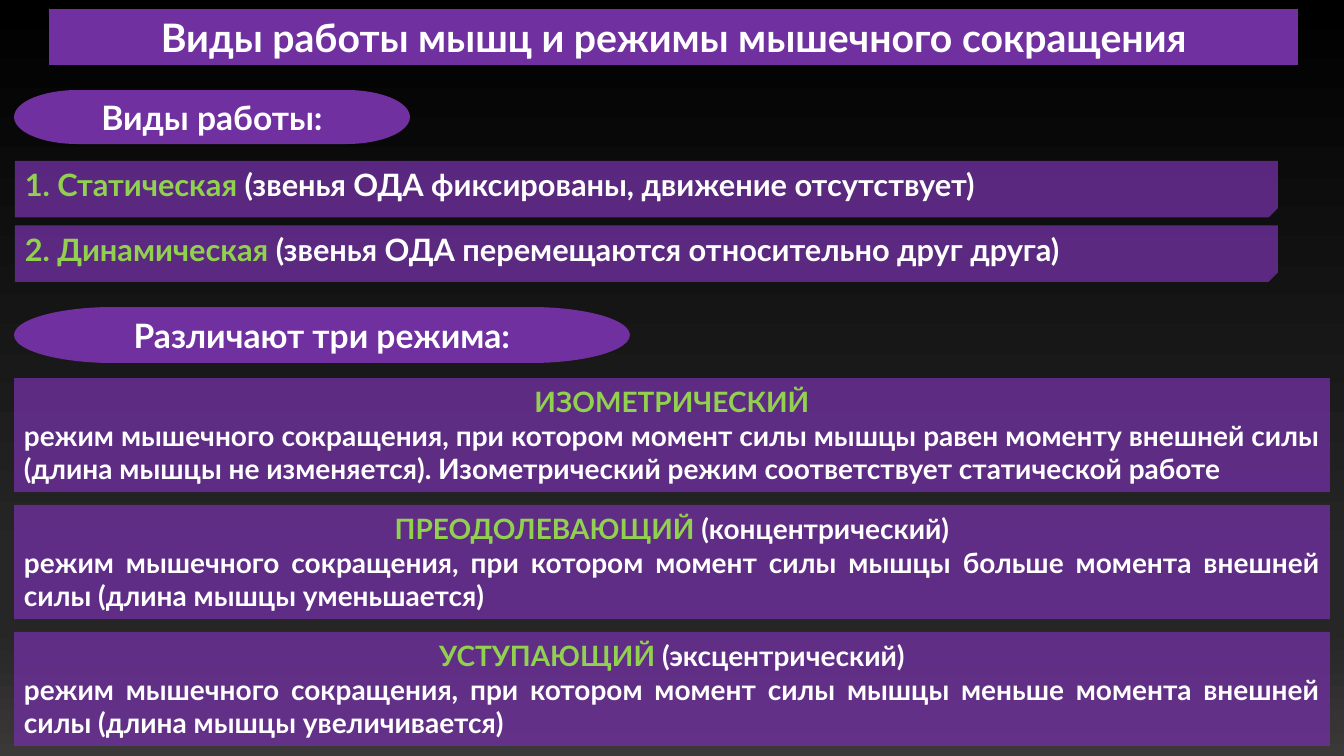
from lxml.etree import SubElement
from pptx import Presentation
from pptx.dml.color import RGBColor
from pptx.enum.shapes import MSO_SHAPE
from pptx.enum.text import MSO_ANCHOR, MSO_AUTO_SIZE, PP_ALIGN
from pptx.oxml.ns import qn
from pptx.util import Emu, Pt

PX = 914400 / 100.8  # EMU in one px
COLORS = {"purple": "7030A0", "green": "92D050", "white": "FFFFFF"}
BACKGROUND_STOPS = [(0, "000000"), (74, "262626"), (83, "262626"), (100, "3B3838")]
FONT = "Lato"
PANEL_OPACITY = 78

WORK_TYPES = [
    ("1. Статическая", " (звенья ОДА фиксированы, движение отсутствует)"),
    ("2. Динамическая", " (звенья ОДА перемещаются относительно друг друга)"),
]
MODES = [
    ("ИЗОМЕТРИЧЕСКИЙ", "",
     "режим мышечного сокращения, при котором момент силы мышцы равен моменту "
     "внешней силы (длина мышцы не изменяется). Изометрический режим "
     "соответствует статической работе"),
    ("ПРЕОДОЛЕВАЮЩИЙ", " (концентрический)",
     "режим мышечного сокращения, при котором момент силы мышцы больше момента "
     "внешней силы (длина мышцы уменьшается)"),
    ("УСТУПАЮЩИЙ", " (эксцентрический)",
     "режим мышечного сокращения, при котором момент силы мышцы меньше момента "
     "внешней силы (длина мышцы увеличивается)"),
]


def px(length):
    return Emu(round(length * PX))


def rgb(name):
    return RGBColor.from_string(COLORS[name])


def paint(shape, opacity=100):
    shape.fill.solid()
    shape.fill.fore_color.rgb = rgb("purple")
    if opacity < 100:
        color = shape._element.spPr.find(qn("a:solidFill"))[0]
        SubElement(color, qn("a:alpha"), val=str(opacity * 1000))
    shape.line.fill.background()


def write(shape, size, paragraphs):
    """Each paragraph is (alignment, [(text, color name), ...])."""
    frame = shape.text_frame
    frame.word_wrap = True
    frame.auto_size = MSO_AUTO_SIZE.NONE
    frame.vertical_anchor = MSO_ANCHOR.MIDDLE
    for index, (alignment, runs) in enumerate(paragraphs):
        paragraph = frame.add_paragraph() if index else frame.paragraphs[0]
        paragraph.alignment = alignment
        paragraph.font.name = FONT
        paragraph.font.size = Pt(size)
        paragraph.font.bold = True
        for text, color in runs:
            if text:
                run = paragraph.add_run()
                run.text = text
                run.font.color.rgb = rgb(color)


def add_panel(slide, kind, box, opacity=100):
    panel = slide.shapes.add_shape(kind, *map(px, box))
    panel.shadow.inherit = False
    paint(panel, opacity)
    return panel


def set_background(slide):
    fill = slide.background.fill
    fill.gradient()
    fill.gradient_angle = 270  # top to bottom
    stops = next(slide._element.iter(qn("a:gsLst")))
    for stop in list(stops):
        stops.remove(stop)
    for position, color in BACKGROUND_STOPS:
        stop = SubElement(stops, qn("a:gs"), pos=str(position * 1000))
        SubElement(stop, qn("a:srgbClr"), val=color)


def add_title(slide, box):
    title = slide.shapes.title
    title.left, title.top, title.width, title.height = map(px, box)
    paint(title)
    write(title, 28, [(PP_ALIGN.CENTER, [
        ("Виды работы мышц и режимы мышечного сокращения", "white")])])


def add_heading(slide, box, text):
    heading = add_panel(slide, MSO_SHAPE.FLOWCHART_TERMINATOR, box)
    write(heading, 24, [(PP_ALIGN.CENTER, [(text, "white")])])


def add_work_types(slide, box):
    left, top, width, height = box
    gap = 8
    row_height = (height - gap * (len(WORK_TYPES) - 1)) / len(WORK_TYPES)
    for row, (term, meaning) in enumerate(WORK_TYPES):
        row_box = (left, top + row * (row_height + gap), width, row_height)
        panel = add_panel(slide, MSO_SHAPE.FOLDED_CORNER, row_box, PANEL_OPACITY)
        write(panel, 22, [(PP_ALIGN.JUSTIFY, [(term, "green"), (meaning, "white")])])


def add_modes(slide, box):
    left, top, width, height = box
    gap = 13
    row_height = (height - gap * (len(MODES) - 1)) / len(MODES)
    for row, (term, synonym, definition) in enumerate(MODES):
        row_box = (left, top + row * (row_height + gap), width, row_height)
        panel = add_panel(slide, MSO_SHAPE.FLOWCHART_PROCESS, row_box, PANEL_OPACITY)
        write(panel, 20, [
            (PP_ALIGN.CENTER, [(term, "green"), (synonym, "white")]),
            (PP_ALIGN.JUSTIFY, [(definition, "white")]),
        ])


def main():
    deck = Presentation()
    deck.slide_width, deck.slide_height = px(1344), px(756)
    slide = deck.slides.add_slide(deck.slide_layouts[5])  # title only
    set_background(slide)
    add_title(slide, (49, 9, 1249, 56))

    # Types of work
    add_heading(slide, (14, 90, 396, 54), "Виды работы:")
    add_work_types(slide, (15, 161, 1263, 121))

    # Modes of contraction
    add_heading(slide, (14, 307, 616, 56), "Различают три режима:")
    add_modes(slide, (14, 378, 1316, 368))

    deck.save("out.pptx")


if __name__ == "__main__":
    main()
